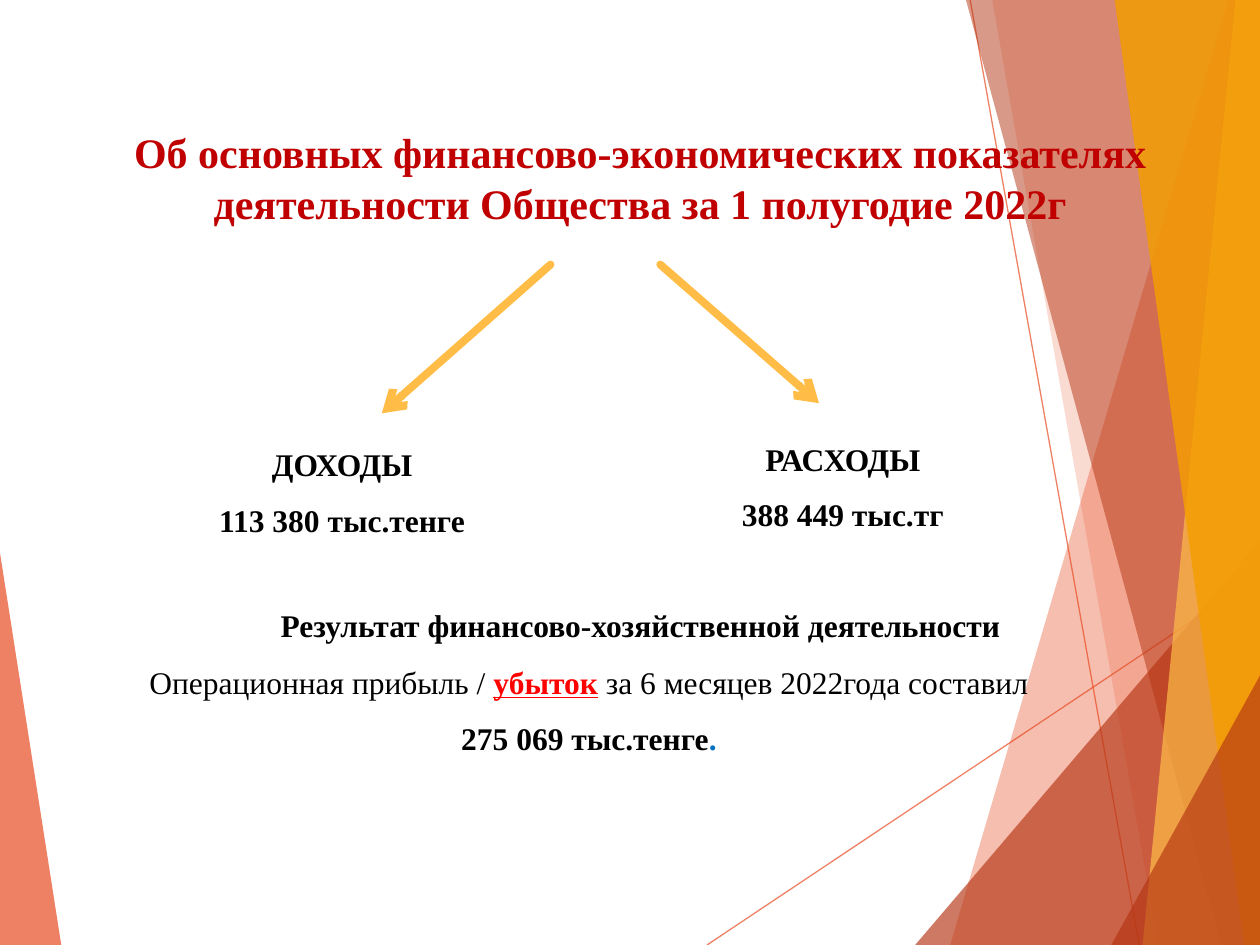
from lxml import etree
from pptx import Presentation
from pptx.dml.color import RGBColor
from pptx.enum.shapes import MSO_CONNECTOR
from pptx.enum.text import PP_ALIGN
from pptx.oxml.ns import qn
from pptx.util import Pt

STRAIGHT = MSO_CONNECTOR.STRAIGHT
CENTER = PP_ALIGN.CENTER
W, H = 720, 540
FONT = "Times New Roman"

LEFT_WEDGE = ([(0, 316), (35, H), (0, H)], "E84C22", 70)
THIN_LINES = [((404, H), (W, 329)), ((554.4, 0), (651, H))]
RIGHT_FACETS = [
    ([(702, 0), (543, H), (W, H), (W, 0)], "E84C22", 36),
    ([(567, 0), (662, H), (W, H), (W, 0)], "E84C22", 20),
    ([(523, H), (W, 309), (W, H)], "B53513", 66),
    ([(552, 0), (698, H), (W, H), (W, 0)], "B53513", 50),
    ([(706, 0), (653, H), (W, H), (W, 0)], "FFBD47", 70),
    ([(637, 0), (711, H), (W, H), (W, 0)], "F49D00", 82),
    ([(635, H), (W, 386), (W, H)], "B53513", 66),
]
ARROWS = [((314.6, 151.2), (218.2, 236.2)), ((377.3, 151.2), (468, 230.4))]

BOLD = {"size": Pt(18), "name": FONT, "bold": True}
PLAIN = {**BOLD, "bold": False}
LOSS = {**BOLD, "underline": True}
TITLE = {**BOLD, "size": Pt(24)}
BLACK, RED, DARK_RED, BLUE = "000000", "FF0000", "C00000", "0070C0"

TEXTS = [
    {"at": (59.8, 37.4, 612, 128.2), "top": 35, "paras": [
        [("Об основных финансово-экономических показателях "
          "деятельности Общества за 1 полугодие 2022г", TITLE, DARK_RED)]]},
    {"at": (70.6, 250.6, 249.8, 61.9), "gap": 10.3, "paras": [
        [("ДОХОДЫ", BOLD, BLACK)], [("113 380 тыс.тенге", BOLD, BLACK)]]},
    {"at": (393.8, 247.7, 175.7, 61.9), "gap": 10.3, "paras": [
        [("РАСХОДЫ", BOLD, BLACK)], [("388 449 тыс.тг", BOLD, BLACK)]]},
    {"at": (62.6, 331.9, 607, 105.1), "spacing": 1.5, "indents": {1: 59}, "paras": [
        [("Результат финансово-хозяйственной деятельности", BOLD, BLACK)],
        [("Операционная прибыль / ", PLAIN, BLACK), ("убыток", LOSS, RED),
         (" за 6 месяцев 2022года составил", PLAIN, BLACK)],
        [("275 069 тыс.тенге", BOLD, BLACK), (".", BOLD, BLUE)]]},
]


def rgb(color):
    return RGBColor.from_string(color)


def set_alpha(sp, percent):
    for clr in sp._element.spPr.iter(qn("a:srgbClr")):
        etree.SubElement(clr, qn("a:alpha"), val=str(percent * 1000))


def add_facet(s, points, color, alpha):
    fb = s.shapes.build_freeform(*points[0], scale=Pt(1))
    fb.add_line_segments(points[1:], close=True)
    sp = fb.convert_to_shape()
    sp.shadow.inherit = False
    sp.fill.solid()
    sp.fill.fore_color.rgb = rgb(color)
    sp.line.fill.background()
    set_alpha(sp, alpha)


def add_line(s, start, end, color, width):
    sp = s.shapes.add_connector(STRAIGHT, *[Pt(v) for v in start + end])
    sp.line.color.rgb = rgb(color)
    sp.line.width = Pt(width)
    etree.SubElement(sp._element.spPr, qn("a:effectLst"))
    return sp


def add_text(s, at, paras, top=3.6, gap=0, spacing=None, indents=None):
    tf = s.shapes.add_textbox(*[Pt(v) for v in at]).text_frame
    tf.word_wrap = True
    tf.margin_top = Pt(top)
    for i, runs in enumerate(paras):
        p = tf.add_paragraph() if i else tf.paragraphs[0]
        p.alignment = CENTER
        p.line_spacing = spacing
        if i and gap:
            p.space_before = Pt(gap)
        if indents and i in indents:
            p._p.get_or_add_pPr().set("marR", str(Pt(indents[i])))
        for text, fmt, color in runs:
            r = p.add_run()
            r.text = text
            for key, value in fmt.items():
                setattr(r.font, key, value)
            r.font.color.rgb = rgb(color)


def main():
    """Build the financial results slide."""
    prs = Presentation()
    prs.slide_width, prs.slide_height = Pt(W), Pt(H)
    s = prs.slides.add_slide(prs.slide_layouts[6])
    add_facet(s, *LEFT_WEDGE)
    for start, end in THIN_LINES:
        set_alpha(add_line(s, start, end, "E84C22", 0.75), 70)
    for facet in RIGHT_FACETS:
        add_facet(s, *facet)
    for text in TEXTS:
        add_text(s, **text)
    for start, end in ARROWS:
        ln = add_line(s, start, end, "FFBD47", 4.5).line._get_or_add_ln()
        ln.set("cap", "rnd")
        etree.SubElement(ln, qn("a:tailEnd"), type="arrow")
    prs.save("out.pptx")


if __name__ == "__main__":
    main()
